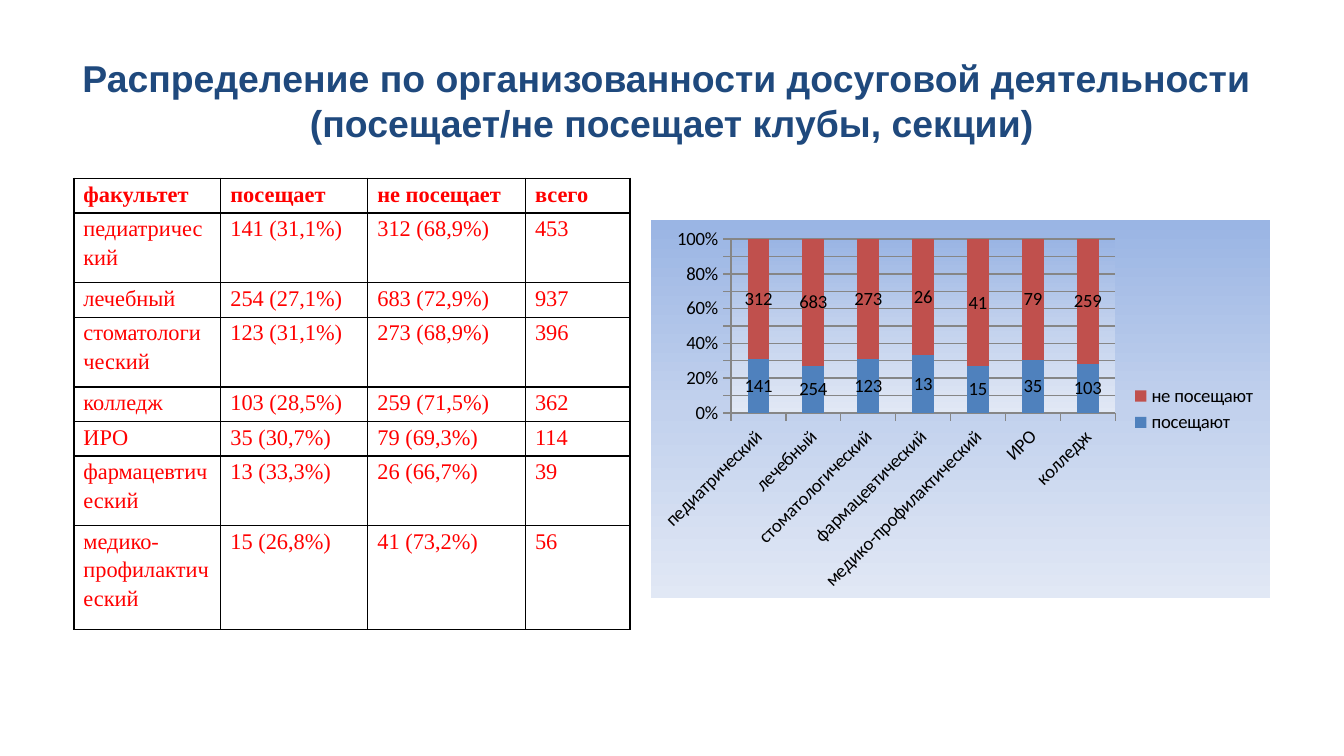
from lxml import etree
from pptx import Presentation
from pptx.chart.data import CategoryChartData
from pptx.dml.color import RGBColor
from pptx.enum.chart import XL_CHART_TYPE, XL_LABEL_POSITION, XL_LEGEND_POSITION, XL_TICK_MARK
from pptx.enum.text import MSO_ANCHOR, PP_ALIGN
from pptx.oxml import parse_xml
from pptx.util import Pt

STACKED = XL_CHART_TYPE.COLUMN_STACKED_100
LABEL_CENTER = XL_LABEL_POSITION.CENTER
LEGEND_RIGHT = XL_LEGEND_POSITION.RIGHT
TICK_OUT = XL_TICK_MARK.OUTSIDE
MIDDLE = MSO_ANCHOR.MIDDLE
CENTER = PP_ALIGN.CENTER

A = "http://schemas.openxmlformats.org/drawingml/2006/main"
C = "http://schemas.openxmlformats.org/drawingml/2006/chart"
TITLE_ONLY = 5


def rgb(value):
    return RGBColor.from_string(value)


def set_text(tf, text, size=12, font="Times New Roman", color="FF0000",
             bold=False, align=None, spacing=None):
    tf.text = text
    p = tf.paragraphs[0]
    p.alignment = align
    p.line_spacing = spacing
    for r in p.runs:
        r.font.size, r.font.name, r.font.bold = Pt(size), font, bold
        r.font.color.rgb = rgb(color)


def gradient(stops):
    """Shape properties with a top-to-bottom gradient, for a chart part."""
    gs = "".join(f'<a:gs pos="{pos * 1000}"><a:srgbClr val="{color}"/></a:gs>'
                 for pos, color in stops)
    return parse_xml(f'<c:spPr xmlns:c="{C}" xmlns:a="{A}"><a:gradFill><a:gsLst>{gs}</a:gsLst>'
                     '<a:lin ang="5400000" scaled="0"/></a:gradFill>'
                     '<a:ln><a:noFill/></a:ln></c:spPr>')


def plot_layout(**fractions):
    parts = "".join(f'<c:{k} val="{v}"/>' for k, v in fractions.items())
    return parse_xml(f'<c:layout xmlns:c="{C}"><c:manualLayout><c:layoutTarget val="inner"/>'
                     f'<c:xMode val="edge"/><c:yMode val="edge"/>{parts}'
                     '</c:manualLayout></c:layout>')


class Deck:
    line_color = "868686"
    border_color = "000000"
    backdrop = [(0, "9AB5E4"), (50, "C2D1ED"), (100, "E1E8F5")]

    def __init__(self, width, height):
        self.prs = Presentation()
        self.prs.slide_width, self.prs.slide_height = Pt(width), Pt(height)
        self.s = self.prs.slides.add_slide(self.prs.slide_layouts[TITLE_ONLY])

    def title(self, text, x, y, w, h):
        sp = self.s.shapes.title
        sp.left, sp.top, sp.width, sp.height = Pt(x), Pt(y), Pt(w), Pt(h)
        sp.text_frame.vertical_anchor = MIDDLE
        set_text(sp.text_frame, text, size=20, font="Arial", color="1F497D",
                 bold=True, align=CENTER)

    def borders(self, cell):
        tcPr = cell._tc.get_or_add_tcPr()
        for i, side in enumerate("LRTB"):
            ln = etree.Element(f"{{{A}}}ln{side}", w=str(Pt(1)))
            fill = etree.SubElement(ln, f"{{{A}}}solidFill")
            etree.SubElement(fill, f"{{{A}}}srgbClr", val=self.border_color)
            tcPr.insert(i, ln)

    def table(self, rows, x, y, widths, heights):
        frame = self.s.shapes.add_table(len(rows), len(widths), Pt(x), Pt(y),
                                        Pt(sum(widths)), Pt(sum(heights)))
        table = frame.table
        table.horz_banding = False
        for column, width in zip(table.columns, widths):
            column.width = Pt(width)
        for i, (row, height) in enumerate(zip(rows, heights)):
            table.rows[i].height = Pt(height)
            for j, text in enumerate(row):
                cell = table.cell(i, j)
                cell.margin_left = cell.margin_right = Pt(5.2)
                cell.margin_top = cell.margin_bottom = 0
                cell.fill.background()
                self.borders(cell)
                set_text(cell.text_frame, text, bold=i == 0, spacing=1.15)

    def chart(self, categories, series, x, y, w, h):
        data = CategoryChartData()
        data.categories = categories
        for name, values, _ in series:
            data.add_series(name, values)
        chart = self.s.shapes.add_chart(STACKED, Pt(x), Pt(y), Pt(w), Pt(h), data).chart
        chart.has_title = False
        chart.font.size, chart.font.name = Pt(10), "Calibri"
        chart.font.color.rgb = rgb("000000")
        chart.has_legend = True
        chart.legend.position = LEGEND_RIGHT
        chart.legend.include_in_layout = False

        # Columns and their labels
        plot = chart.plots[0]
        plot.gap_width, plot.overlap, plot.vary_by_categories = 150, 100, False
        for ser, (_, _, color) in zip(plot.series, series):
            ser.format.fill.solid()
            ser.format.fill.fore_color.rgb = rgb(color)
            ser.data_labels.show_value = True
            ser.data_labels.position = LABEL_CENTER

        # Axes
        cat, val = chart.category_axis, chart.value_axis
        for axis in (cat, val):
            axis.major_tick_mark = TICK_OUT
            axis.format.line.color.rgb = rgb(self.line_color)
        cat.tick_labels.font.size = Pt(10)
        cat._element.find(f".//{{{A}}}bodyPr").set("rot", "-2700000")
        val.minimum_scale, val.maximum_scale, val.major_unit = 0, 1, 0.1
        val.tick_labels.number_format = "0%"
        val.tick_labels.number_format_is_linked = False
        val.major_gridlines.format.line.color.rgb = rgb(self.line_color)

        # Gradient backdrops and plot position
        body = chart._chartSpace.find(f"{{{C}}}chart")
        body.addnext(gradient(self.backdrop))
        area = body.find(f"{{{C}}}plotArea")
        for old in area.findall(f"{{{C}}}layout"):
            area.remove(old)
        area.insert(0, plot_layout(x=0.13, y=0.05, w=0.62, h=0.46))
        area.append(gradient(self.backdrop))


def main():
    deck = Deck(720, 405)
    deck.title("Распределение по организованности досуговой деятельности \v"
               "(посещает/не посещает клубы, секции)", 34, 22.5, 652, 62)

    # Table: row heights are multiples of one text line
    rows = [
        ("факультет", "посещает", "не посещает", "всего"),
        ("педиатрический", "141 (31,1%)", "312 (68,9%)", "453"),
        ("лечебный", "254 (27,1%)", "683 (72,9%)", "937"),
        ("стоматологический", "123 (31,1%)", "273 (68,9%)", "396"),
        ("колледж", "103 (28,5%)", "259 (71,5%)", "362"),
        ("ИРО", "35 (30,7%)", "79 (69,3%)", "114"),
        ("фармацевтический", "13 (33,3%)", "26 (66,7%)", "39"),
        ("медико-профилактический", "15 (26,8%)", "41 (73,2%)", "56"),
    ]
    heights = [18.6 * lines for lines in (1, 2, 1, 2, 1, 1, 2, 3)]
    deck.table(rows, 39.5, 95.6, [78.75, 78.75, 84.5, 56.2], heights)

    # Chart
    categories = ["педиатрический", "лечебный", "стоматологический", "фармацевтический",
                  "медико-профилактический", "ИРО", "колледж"]
    series = [("посещают", (141, 254, 123, 13, 15, 35, 103), "4F81BD"),
              ("не посещают", (312, 683, 273, 26, 41, 79, 259), "C0504D")]
    deck.chart(categories, series, 348.5, 118, 332, 202.5)

    deck.prs.save("out.pptx")


if __name__ == "__main__":
    main()
